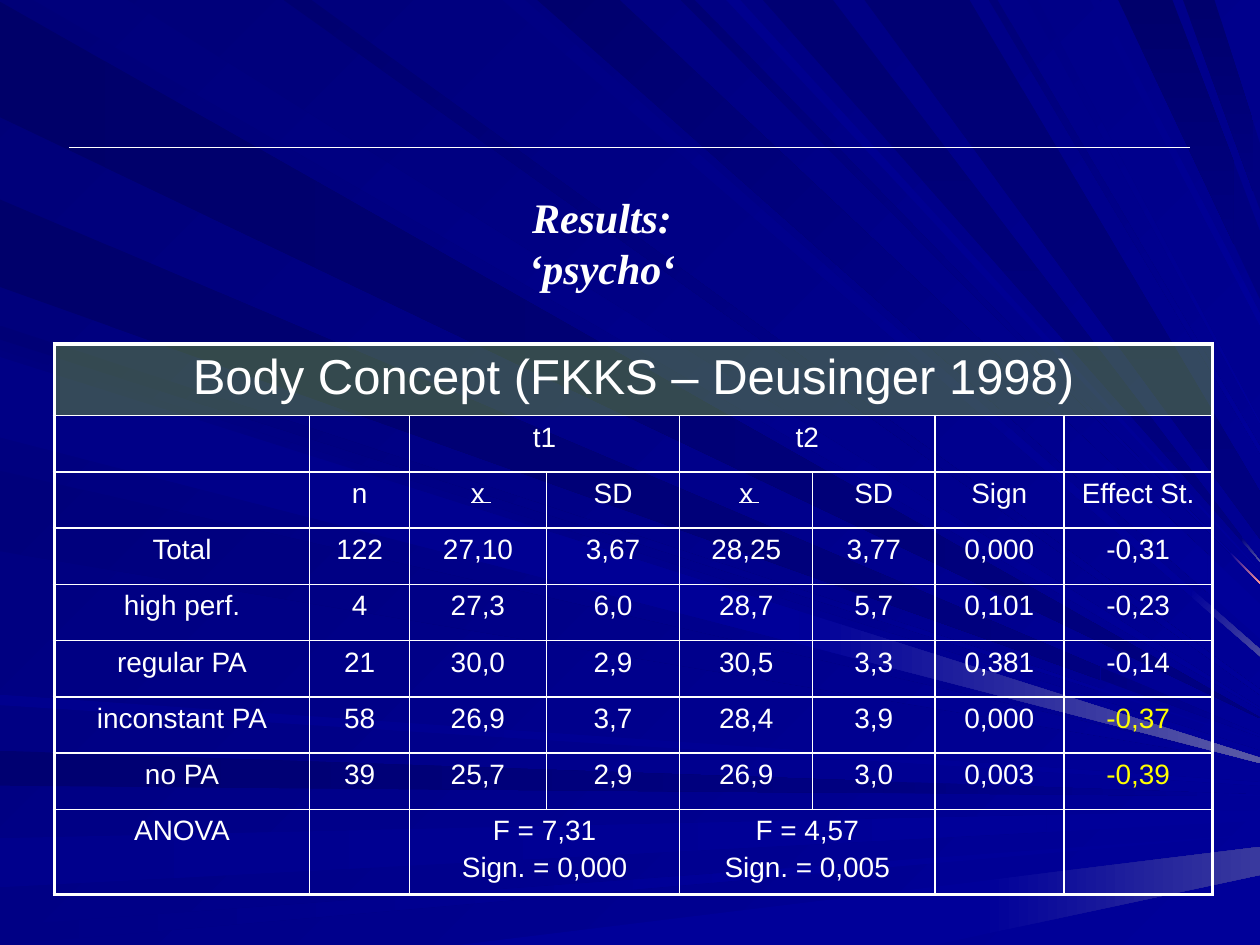
from dataclasses import dataclass
from typing import Any, NamedTuple, Optional

from lxml.etree import SubElement
from pptx import Presentation
from pptx.dml.color import RGBColor as Rgb
from pptx.enum.shapes import MSO_CONNECTOR as Connector
from pptx.enum.text import MSO_AUTO_SIZE as AutoSize, PP_ALIGN as Align
from pptx.oxml import parse_xml
from pptx.oxml.ns import nsdecls, qn
from pptx.util import Pt

WIDTH, HEIGHT = 720, 540


@dataclass(frozen=True)
class Theme:
    white: str = "FFFFFF"
    highlight: str = "FFFF00"
    header: str = "84B818"
    header_alpha: int = 40000
    mid: str = "000080"
    bright: str = "000099"
    soft_glow: str = "39399E"
    glow: str = "4A4AA1"
    strong_glow: str = "5A5AA6"
    spark: str = "FF9999"
    title_font: str = "Times New Roman"
    table_font: str = "Arial"
    title_size: float = 24
    header_size: float = 28
    cell_size: float = 16
    outer_line: float = 2.25
    inner_line: float = 1

    def blue(self, shade: str) -> str:
        return f"0000{shade}"


THEME = Theme()


class Style(NamedTuple):
    edge: str
    color: str
    angle: int


class Ray(NamedTuple):
    style: Style
    shade: str
    upper_near: float
    lower_near: float
    upper_far: float
    lower_far: float
    split: float = WIDTH
    far_color: Optional[str] = None


class Rule(NamedTuple):
    left: float
    right: float
    y: float
    width: float


class Span(NamedTuple):
    row: int
    column: int
    width: int


LEFT_DARK = Style("left", THEME.mid, 0)
LEFT_FLAT = Style("left", THEME.bright, 0)
LEFT_SLANT = Style("left", THEME.bright, 45)
BOTTOM = Style("bottom", THEME.bright, 0)
TOP_DARK = Style("top", THEME.mid, 90)
TOP_SLANT = Style("top", THEME.bright, 45)

RAYS = (
    Ray(LEFT_DARK, "69", 1, 67, 410, 410.5),
    Ray(TOP_SLANT, "7B", 73, 19, 404.5, 405.5),
    Ray(LEFT_DARK, "71", 429, 449, 454, 455, 505, THEME.bright),
    Ray(LEFT_FLAT, "8C", 479, 507, 463, 469, 598, THEME.bright),
    Ray(LEFT_FLAT, "85", 529, 540, 476.5, 477, 452, THEME.bright),
    Ray(BOTTOM, "99", 262, 534, 484, 500, 560, THEME.soft_glow),
    Ray(LEFT_SLANT, "76", 186, 194, 423.5, 424, 629, THEME.bright),
    Ray(LEFT_DARK, "6B", 114, 164, 420, 421, 629, THEME.bright),
    Ray(TOP_SLANT, "83", 300, 287, 371, 375, 681, THEME.glow),
    Ray(TOP_SLANT, "6D", 354, 307, 345, 365, 690, THEME.bright),
    Ray(TOP_SLANT, "73", 397, 389, 333, 333.5, 703, THEME.spark),
    Ray(TOP_DARK, "73", 476, 436, 320.5, 321, 710, THEME.strong_glow),
    Ray(TOP_DARK, "6B", 670, 639, 132, 171, 705, THEME.mid),
    Ray(TOP_DARK, "6D", 694, 676, 82, 120, 716, THEME.mid),
    Ray(LEFT_SLANT, "7E", 200, 246, 429, 433),
    Ray(LEFT_SLANT, "7B", 269, 315, 435.5, 436),
    Ray(LEFT_FLAT, "8E", 397, 403, 447, 449),
    Ray(TOP_SLANT, "70", 178, 162, 394, 397),
    Ray(TOP_SLANT, "8E", 423, 415, 326, 327),
    Ray(TOP_DARK, "73", 554, 494, 281, 308),
    Ray(TOP_SLANT, "78", 570, 565, 255, 259),
    Ray(TOP_SLANT, "85", 593, 587, 241, 242),
    Ray(TOP_SLANT, "8A", 628, 623, 179, 186),
    Ray(LEFT_FLAT, "85", 204, 250, 433, 436, 457, THEME.strong_glow),
)
TITLE_RULE = Rule(39.5, 680, 84.25, 0.5)
MEAN_BARS = [Rule(left, left + 11, 287.3, 0.75) for left in (269.3, 422.5)]
COLUMN_WIDTHS = (146, 57, 78.25, 76.25, 76, 69.75, 73.75, 85)
ROW_HEIGHTS = (41, *[32.15] * 7, 48.75)
ROWS = (
    ("Body Concept (FKKS – Deusinger 1998)", "", "", "", "", "", "", ""),
    ("", "", "t1", "", "t2", "", "", ""),
    ("", "n", "x", "SD", "x", "SD", "Sign", "Effect St."),
    ("Total", "122", "27,10", "3,67", "28,25", "3,77", "0,000", "-0,31"),
    ("high perf.", "4", "27,3", "6,0", "28,7", "5,7", "0,101", "-0,23"),
    ("regular PA", "21", "30,0", "2,9", "30,5", "3,3", "0,381", "-0,14"),
    ("inconstant PA", "58", "26,9", "3,7", "28,4", "3,9", "0,000", "-0,37"),
    ("no PA", "39", "25,7", "2,9", "26,9", "3,0", "0,003", "-0,39"),
    ("ANOVA", "", "F = 7,31\nSign. = 0,000", "", "F = 4,57\nSign. = 0,005", "", "", ""),
)
SPANS = (Span(0, 0, 8), *[Span(row, column, 2) for row in (1, 8) for column in (2, 4)])
HIGHLIGHTS = ("-0,37", "-0,39")


def apply_format(target: Any, values: dict) -> None:
    for name, value in values.items():
        setattr(target, name, value)


def set_font(font: Any, color: str, values: dict) -> None:
    apply_format(font, values)
    font.color.rgb = Rgb.from_string(color)


def fill_solid(fill: Any, color: str) -> None:
    fill.solid()
    fill.fore_color.rgb = Rgb.from_string(color)


def fill_gradient(fill: Any, start: str, end: str, angle: int) -> None:
    if start == end:
        fill_solid(fill, end)
        return
    fill.gradient()
    fill.gradient_angle = -angle % 360
    for stop, color in zip(fill.gradient_stops, (start, end)):
        stop.color.rgb = Rgb.from_string(color)


def draw_polygon(slide: Any, points: list, start: str, end: str, angle: int) -> None:
    first, *rest = [(Pt(x), Pt(y)) for x, y in points]
    builder = slide.shapes.build_freeform(*first)
    builder.add_line_segments(rest, close=True)
    shape = builder.convert_to_shape()
    shape.shadow.inherit = False
    shape.line.fill.background()
    fill_gradient(shape.fill, start, end, angle)


def edge_point(edge: str, position: float) -> tuple:
    return {"left": (0, position), "top": (position, 0), "bottom": (position, HEIGHT)}[edge]


def point_at(x: float, start: tuple, end: tuple) -> tuple:
    share = (x - start[0]) / (end[0] - start[0])
    return x, start[1] + share * (end[1] - start[1])


def draw_ray(slide: Any, ray: Ray) -> None:
    edge, color, angle = ray.style
    upper = edge_point(edge, ray.upper_near), (WIDTH, ray.upper_far)
    lower = edge_point(edge, ray.lower_near), (WIDTH, ray.lower_far)
    upper_split, lower_split = (point_at(ray.split, *side) for side in (upper, lower))
    draw_polygon(slide, [upper[0], upper_split, lower_split, lower[0]],
                 THEME.blue(ray.shade), color, angle)
    if ray.far_color:
        draw_polygon(slide, [upper_split, upper[1], lower[1], lower_split],
                     color, ray.far_color, angle)


def draw_rule(slide: Any, rule: Rule) -> None:
    connector = slide.shapes.add_connector(
        Connector.STRAIGHT, Pt(rule.left), Pt(rule.y), Pt(rule.right), Pt(rule.y))
    connector.line.width = Pt(rule.width)
    connector.line.color.rgb = Rgb.from_string(THEME.white)
    SubElement(connector._element.spPr, qn("a:effectLst"))


def set_borders(cell: Any, outer: dict) -> None:
    properties = cell._tc.get_or_add_tcPr()
    for index, (side, is_outer) in enumerate(outer.items()):
        width = Pt(THEME.outer_line if is_outer else THEME.inner_line)
        properties.insert(index, parse_xml(
            f'<a:ln{side} {nsdecls("a")} w="{width}"><a:solidFill>'
            f'<a:srgbClr val="{THEME.white}"/></a:solidFill></a:ln{side}>'))


def draw_table(slide: Any) -> None:
    frame = slide.shapes.add_table(
        len(ROWS), len(COLUMN_WIDTHS), Pt(31), Pt(196.5), Pt(sum(COLUMN_WIDTHS)), Pt(sum(ROW_HEIGHTS)))
    table = frame.table
    apply_format(table, {"first_row": False, "horz_banding": False})
    for column, width in zip(table.columns, COLUMN_WIDTHS):
        column.width = Pt(width)
    for row, height in zip(table.rows, ROW_HEIGHTS):
        row.height = Pt(height)
    for span in SPANS:
        table.cell(span.row, span.column).merge(table.cell(span.row, span.column + span.width - 1))
    for row, texts in enumerate(ROWS):
        for column, text in enumerate(texts):
            cell = table.cell(row, column)
            cell.text = text
            color = THEME.highlight if text in HIGHLIGHTS else THEME.white
            size = THEME.cell_size if row else THEME.header_size
            for index, paragraph in enumerate(cell.text_frame.paragraphs):
                apply_format(paragraph, {"alignment": Align.CENTER,
                                         "space_before": Pt(0.2 * size if index else 0)})
                set_font(paragraph.font, color, {"name": THEME.table_font, "size": Pt(size)})
            cell.fill.background()
            last_column = column + (cell.span_width if cell.is_merge_origin else 1)
            set_borders(cell, {"L": column == 0, "R": last_column == len(texts),
                               "T": row == 0, "B": row == len(ROWS) - 1})
    header = table.cell(0, 0)
    fill_solid(header.fill, THEME.header)
    tint = header._tc.tcPr.find(qn("a:solidFill")).find(qn("a:srgbClr"))
    SubElement(tint, qn("a:alpha"), val=str(THEME.header_alpha))


def draw_title(slide: Any) -> None:
    frame = slide.shapes.add_textbox(Pt(252), Pt(106), Pt(184), Pt(36)).text_frame
    apply_format(frame, {"word_wrap": False, "auto_size": AutoSize.SHAPE_TO_FIT_TEXT,
                         "text": "Results: ‘psycho‘"})
    paragraph = frame.paragraphs[0]
    paragraph.alignment = Align.CENTER
    set_font(paragraph.runs[0].font, THEME.white, {
        "name": THEME.title_font, "size": Pt(THEME.title_size), "bold": True, "italic": True})


def main() -> None:
    presentation = Presentation()
    apply_format(presentation, {"slide_width": Pt(WIDTH), "slide_height": Pt(HEIGHT)})
    slide = presentation.slides.add_slide(presentation.slide_layouts[6])
    fill_gradient(slide.background.fill, THEME.blue("78"), THEME.bright, 45)
    for ray in RAYS:
        draw_ray(slide, ray)
    draw_rule(slide, TITLE_RULE)
    draw_table(slide)
    for bar in MEAN_BARS:
        draw_rule(slide, bar)
    draw_title(slide)
    presentation.save("out.pptx")


if __name__ == "__main__":
    main()
